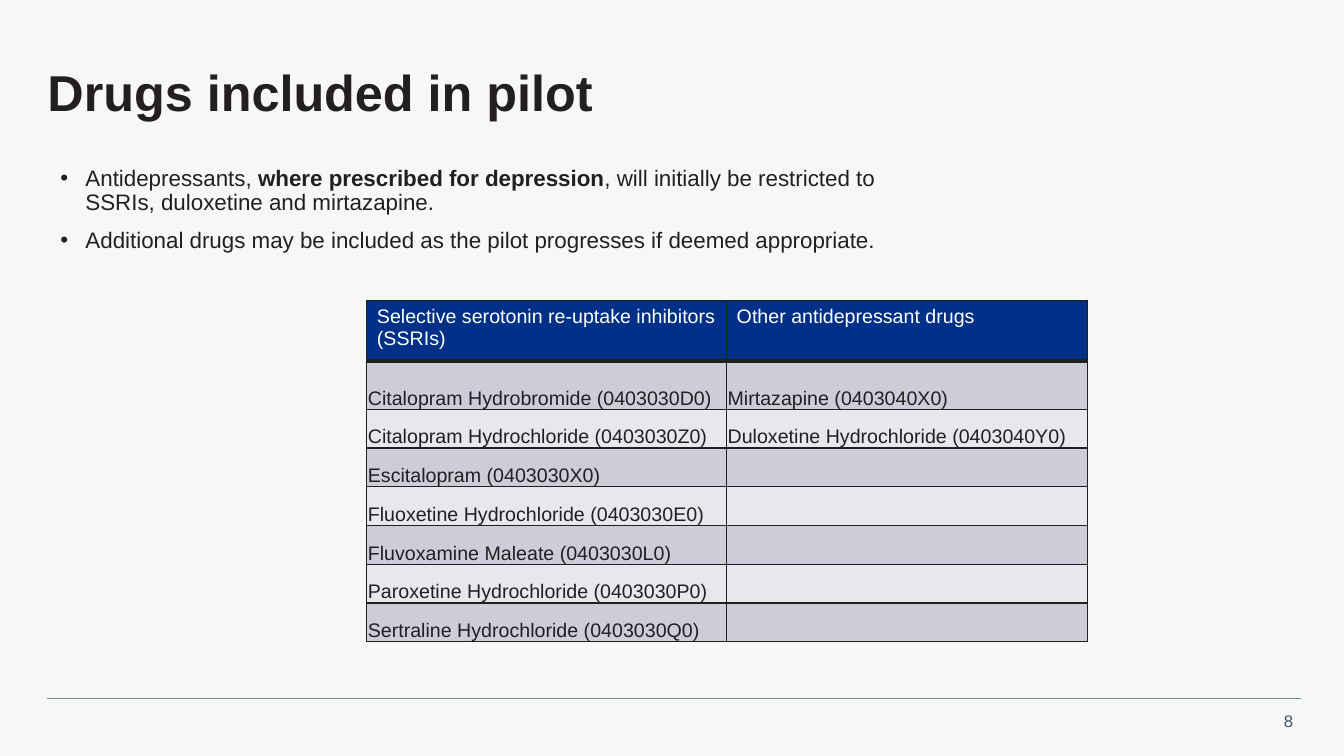
from dataclasses import dataclass

from lxml.etree import SubElement
from pptx import Presentation
from pptx.dml.color import RGBColor
from pptx.enum.shapes import MSO_CONNECTOR
from pptx.enum.text import MSO_ANCHOR as Anchor, MSO_AUTO_SIZE as AutoSize, PP_ALIGN as Align
from pptx.oxml.ns import qn
from pptx.util import Pt

PX = 4572  # 200 px to the inch
FONT = "Arial"
COLOURS = {
    "background": "F6F8F8",
    "ink": "231F20",
    "page": "425563",
    "rule": "768692",
    "white": "FFFFFF",
    "header": "003087",
    "odd": "CCCDD9",
    "even": "E7E8ED",
}


@dataclass(frozen=True)
class Area:
    left: int
    top: int
    width: int
    height: int

    def emu(self) -> tuple[int, ...]:
        return tuple(n * PX for n in (self.left, self.top, self.width, self.height))


@dataclass(frozen=True)
class DrugRow:
    ssri: str
    other: str = ""


TITLE_AREA = Area(94, 94, 2494, 190)
BULLET_AREA = Area(100, 322, 1692, 490)
PAGE_AREA = Area(2504, 1400, 82, 60)
TABLE_AREA = Area(728, 596, 1430, 678)
COLUMN_WIDTHS = (714, 716)
HEADER_HEIGHT, FIRST_HEIGHT, ROW_HEIGHT = 120, 96, 77

# Each bullet is a list of (text, bold) spans
BULLETS = [
    [
        ("Antidepressants, ", False),
        ("where prescribed for depression", True),
        (", will initially be restricted to SSRIs, duloxetine and mirtazapine.", False),
    ],
    [("Additional drugs may be included as the pilot progresses if deemed appropriate.", False)],
]
DRUG_ROWS = [
    DrugRow("Selective serotonin re-uptake inhibitors (SSRIs)", "Other antidepressant drugs"),
    DrugRow("Citalopram Hydrobromide (0403030D0)", "Mirtazapine (0403040X0)"),
    DrugRow("Citalopram Hydrochloride (0403030Z0)", "Duloxetine Hydrochloride (0403040Y0)"),
    DrugRow("Escitalopram (0403030X0)"),
    DrugRow("Fluoxetine Hydrochloride (0403030E0)"),
    DrugRow("Fluvoxamine Maleate (0403030L0)"),
    DrugRow("Paroxetine Hydrochloride (0403030P0)"),
    DrugRow("Sertraline Hydrochloride (0403030Q0)"),
]


def colour(name: str) -> RGBColor:
    return RGBColor.from_string(COLOURS[name])


def add_span(para, text: str, *, size: int, ink: str = "ink", bold: bool = False) -> None:
    span = para.add_run()
    span.text = text
    span.font.name = FONT
    span.font.size = Pt(size)
    span.font.bold = bold
    span.font.color.rgb = colour(ink)


def set_margins(target, left: int, top: int, right: int, bottom: int) -> None:
    target.margin_left, target.margin_top = left * PX, top * PX
    target.margin_right, target.margin_bottom = right * PX, bottom * PX


def add_title(slide, text: str) -> None:
    title = slide.shapes.title
    title.left, title.top, title.width, title.height = TITLE_AREA.emu()
    frame = title.text_frame
    frame.auto_size = AutoSize.NONE
    frame.vertical_anchor = Anchor.MIDDLE
    set_margins(frame, 0, 0, 0, 0)
    para = frame.paragraphs[0]
    para.alignment = Align.LEFT
    para.line_spacing = 0.9
    add_span(para, text, size=36, bold=True)


def add_bullets(slide) -> None:
    frame = slide.shapes.add_textbox(*BULLET_AREA.emu()).text_frame
    frame.word_wrap = True
    for index, spans in enumerate(BULLETS):
        para = frame.add_paragraph() if index else frame.paragraphs[0]
        para.line_spacing = 0.9
        para.space_before = Pt(10 if index else 0)
        properties = para._p.get_or_add_pPr()
        properties.set("marL", str(50 * PX))
        properties.set("indent", str(-50 * PX))
        SubElement(properties, qn("a:buFont"), typeface=FONT)
        SubElement(properties, qn("a:buChar"), char="•")
        for text, bold in spans:
            add_span(para, text, size=16, bold=bold)


def set_borders(cell, bottom: int) -> None:
    properties = cell._tc.get_or_add_tcPr()
    widths = {"a:lnL": 1, "a:lnR": 1, "a:lnT": 1, "a:lnB": bottom}
    for index, (tag, width) in enumerate(widths.items()):
        border = SubElement(properties, qn(tag), w=str(Pt(width)))
        SubElement(SubElement(border, qn("a:solidFill")), qn("a:srgbClr"), val=COLOURS["ink"])
        properties.insert(index, border)  # borders come before the fill


def add_drug_table(slide) -> None:
    frame = slide.shapes.add_table(len(DRUG_ROWS), len(COLUMN_WIDTHS), *TABLE_AREA.emu())
    table = frame.table
    for column, width in zip(table.columns, COLUMN_WIDTHS):
        column.width = width * PX
    for index, drugs in enumerate(DRUG_ROWS):
        is_header = index == 0
        height = (HEADER_HEIGHT, FIRST_HEIGHT)[index] if index < 2 else ROW_HEIGHT
        table.rows[index].height = height * PX
        for cell, text in zip(table.rows[index].cells, (drugs.ssri, drugs.other)):
            cell.fill.solid()
            cell.fill.fore_color.rgb = colour("header" if is_header else "odd" if index % 2 else "even")
            if not is_header:
                cell.vertical_anchor = Anchor.BOTTOM
                set_margins(cell, 2, 2, 2, 0)
            if text:
                add_span(cell.text_frame.paragraphs[0], text, size=14,
                         ink="white" if is_header else "ink")
            set_borders(cell, bottom=3 if is_header else 1)


def add_footer(slide, number: str) -> None:
    line = slide.shapes.add_connector(
        MSO_CONNECTOR.STRAIGHT, 94 * PX, 1386 * PX, 2582 * PX, 1386 * PX)
    line.line.color.rgb = colour("rule")
    line.line.width = Pt(0.5)
    SubElement(line._element.spPr, qn("a:effectLst"))
    frame = slide.shapes.add_textbox(*PAGE_AREA.emu()).text_frame
    frame.word_wrap = False
    frame.auto_size = AutoSize.SHAPE_TO_FIT_TEXT
    para = frame.paragraphs[0]
    para.alignment = Align.RIGHT
    add_span(para, number, size=12, ink="page")


def main() -> None:
    deck = Presentation()
    deck.slide_width, deck.slide_height = 2667 * PX, 1500 * PX
    slide = deck.slides.add_slide(deck.slide_layouts[5])
    slide.background.fill.solid()
    slide.background.fill.fore_color.rgb = colour("background")

    # Footer, heading and body
    add_footer(slide, "8")
    add_title(slide, "Drugs included in pilot")
    add_bullets(slide)
    add_drug_table(slide)
    deck.save("out.pptx")


if __name__ == "__main__":
    main()
